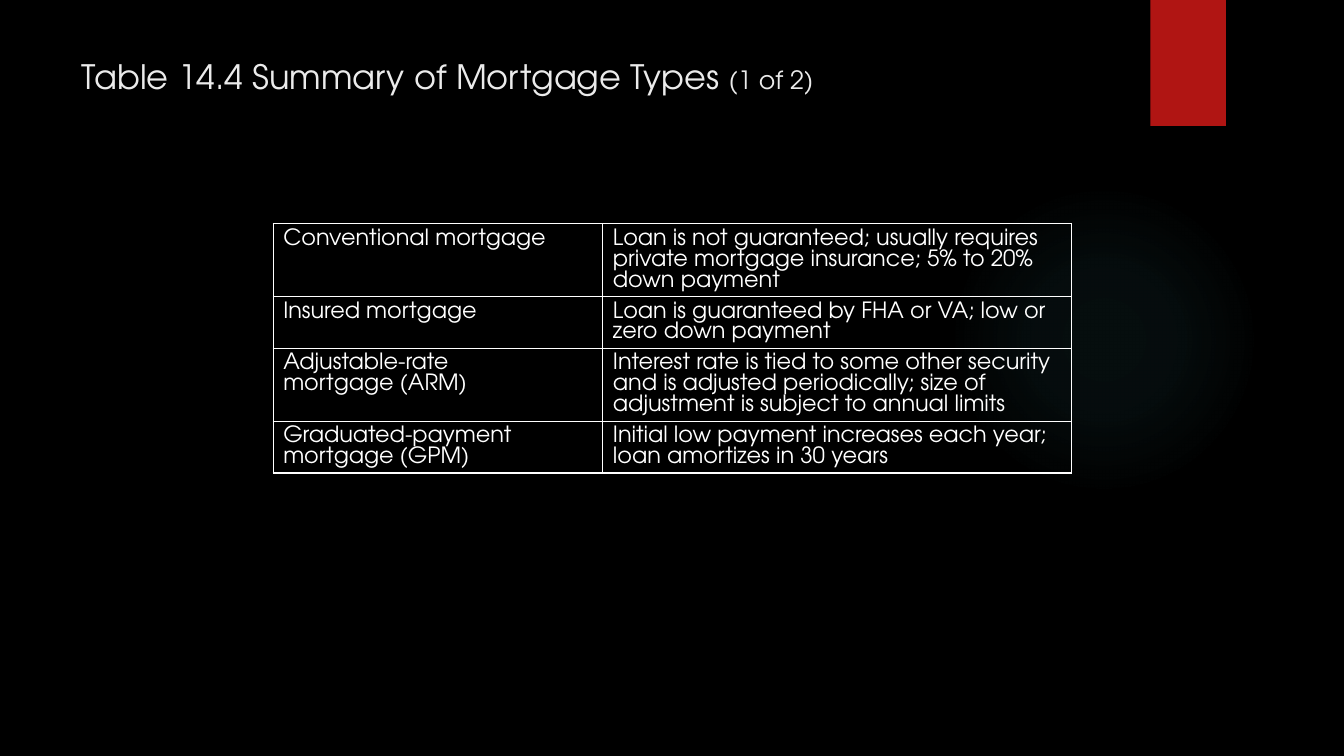
from dataclasses import dataclass

from lxml.etree import SubElement
from pptx import Presentation
from pptx.dml.color import RGBColor as RGB
from pptx.enum.shapes import MSO_SHAPE as SHAPE
from pptx.enum.text import MSO_ANCHOR as ANCHOR, MSO_AUTO_SIZE as AUTO, PP_ALIGN as ALIGN
from pptx.oxml import parse_xml
from pptx.oxml.ns import nsdecls, qn
from pptx.util import Inches, Pt


@dataclass(frozen=True)
class Theme:
    font: str = "TeX Gyre Adventor"
    background: str = "000000"
    glow: str = "50B9C1"
    ribbon: str = "B01513"
    title: str = "EBEBEB"
    text: str = "FFFFFF"
    title_size: float = 24
    part_size: float = 18
    cell_size: float = 16
    cell_leading: float = 14.9
    border: float = 1


THEME = Theme()

MORTGAGES = [
    ("Conventional mortgage",
     "Loan is not guaranteed; usually requires private mortgage insurance; 5% to 20% down payment"),
    ("Insured mortgage", "Loan is guaranteed by FHA or VA; low or zero down payment"),
    ("Adjustable-rate\nmortgage (ARM)",
     "Interest rate is tied to some other security and is adjusted periodically; "
     "size of adjustment is subject to annual limits"),
    ("Graduated-payment\nmortgage (GPM)",
     "Initial low payment increases each year; loan amortizes in 30 years"),
]


def add_run(p, text, size=THEME.cell_size, color=THEME.text):
    r = p.add_run()
    r.text = text
    r.font.name = THEME.font
    r.font.size = Pt(size)
    r.font.bold = False
    r.font.color.rgb = RGB.from_string(color)


def add_plain_shape(s, kind, left, top, width, height):
    sp = s.shapes.add_shape(kind, Inches(left), Inches(top), Inches(width), Inches(height))
    sp.shadow.inherit = False
    sp.line.fill.background()
    return sp


def add_glow(s):
    sp = add_plain_shape(s, SHAPE.OVAL, 9.41, 1.83, 3.08, 3.08)
    stops = "".join(
        f'<a:gs pos="{pos * 1000}"><a:srgbClr val="{THEME.glow}">'
        f'<a:alpha val="{alpha * 1000}"/></a:srgbClr></a:gs>'
        for pos, alpha in [(0, 7), (36, 6), (69, 0), (100, 0)])
    gradient = parse_xml(
        f'<a:gradFill {nsdecls("a")}><a:gsLst>{stops}</a:gsLst><a:path path="circle">'
        '<a:fillToRect l="50000" t="50000" r="50000" b="50000"/></a:path></a:gradFill>')
    sp.fill.background()
    props = sp.element.spPr
    props.replace(props.find(qn("a:noFill")), gradient)


def add_ribbon(s):
    sp = add_plain_shape(s, SHAPE.RECTANGLE, 11.41, 0, 0.75, 1.25)
    sp.fill.solid()
    sp.fill.fore_color.rgb = RGB.from_string(THEME.ribbon)


def set_title(s, text, part):
    sp = s.shapes.title
    sp.left, sp.top, sp.width, sp.height = (Inches(v) for v in (0.71, 0.5, 10.29, 1.53))
    tf = sp.text_frame
    tf.word_wrap = True
    tf.auto_size = AUTO.NONE
    tf.vertical_anchor = ANCHOR.TOP
    p = tf.paragraphs[0]
    p.alignment = ALIGN.LEFT
    add_run(p, text, THEME.title_size, THEME.title)
    add_run(p, part, THEME.part_size, THEME.title)


def set_borders(cell):
    props = cell._tc.get_or_add_tcPr()
    for side in ("lnL", "lnR", "lnT", "lnB"):
        line = SubElement(props, qn(f"a:{side}"), w=str(Pt(THEME.border)))
        fill = SubElement(line, qn("a:solidFill"))
        SubElement(fill, qn("a:srgbClr"), val=THEME.text)


def fill_cell(cell, text):
    set_borders(cell)
    cell.fill.background()
    tf = cell.text_frame
    for i, line in enumerate(text.split("\n")):
        p = tf.add_paragraph() if i else tf.paragraphs[0]
        p.line_spacing = Pt(THEME.cell_leading)
        add_run(p, line)


def add_mortgage_table(s, rows, widths=(3.27, 4.65), row_height=0.41):
    table = s.shapes.add_table(
        len(rows), len(widths), Inches(2.71), Inches(2.22),
        Inches(sum(widths)), Inches(row_height * len(rows))).table
    table.first_row = False
    table.horz_banding = False
    for column, width in zip(table.columns, widths):
        column.width = Inches(width)
    for row, texts in zip(table.rows, rows):
        row.height = Inches(row_height)
        for cell, text in zip(row.cells, texts):
            fill_cell(cell, text)


def main():
    prs = Presentation()
    prs.slide_width, prs.slide_height = Inches(13.33), Inches(7.5)
    s = prs.slides.add_slide(prs.slide_layouts[5])
    s.background.fill.solid()
    s.background.fill.fore_color.rgb = RGB.from_string(THEME.background)
    add_glow(s)
    add_ribbon(s)
    set_title(s, "Table 14.4 Summary of Mortgage Types ", "(1 of 2)")
    add_mortgage_table(s, MORTGAGES)
    prs.save("out.pptx")


if __name__ == "__main__":
    main()
